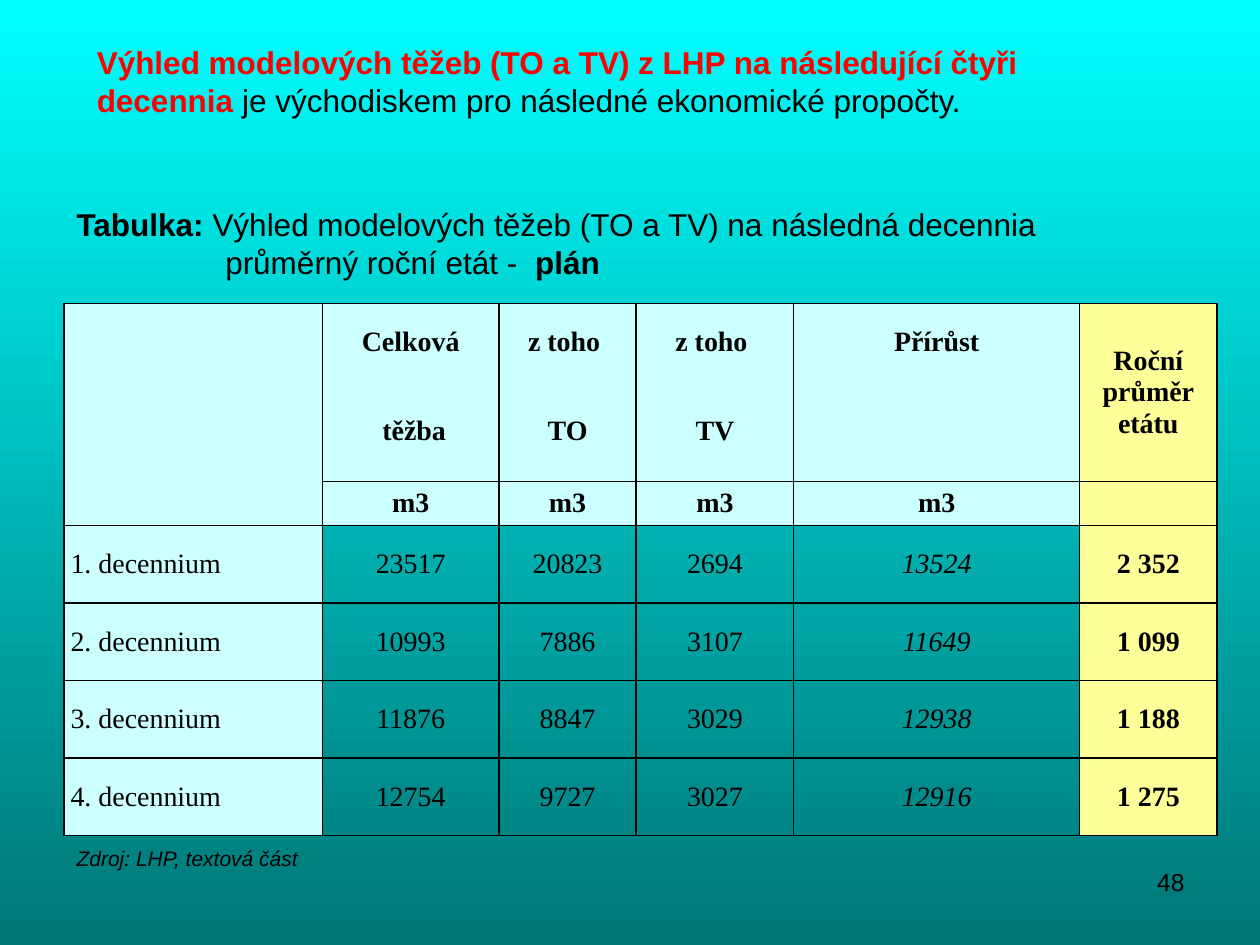
from pptx import Presentation
from pptx.dml.color import RGBColor
from pptx.enum.text import MSO_ANCHOR, MSO_AUTO_SIZE, PP_ALIGN
from pptx.oxml import parse_xml
from pptx.oxml.ns import nsdecls
from pptx.util import Inches, Pt

MID, TOP = MSO_ANCHOR.MIDDLE, MSO_ANCHOR.TOP
GROW, FIXED = MSO_AUTO_SIZE.SHAPE_TO_FIT_TEXT, MSO_AUTO_SIZE.NONE
LEFT, CENTER, RIGHT = PP_ALIGN.LEFT, PP_ALIGN.CENTER, PP_ALIGN.RIGHT

COLORS = {"cyan": "00FFFF", "teal": "007676", "red": "FF0000",
          "black": "000000", "pale": "CCFFFF", "yellow": "FFFF99"}

TITLE = [[("Výhled modelových těžeb (TO a TV) z LHP na následující čtyři decennia ", True, "red"),
          ("je východiskem pro následné ekonomické propočty.", False, "black")]]
CAPTION = [[("Tabulka:", True, "black"),
            (" Výhled modelových těžeb (TO a TV) na následná decennia", False, "black")],
           [("průměrný roční etát -  ", False, "black"), ("plán", True, "black")]]
SOURCE = [[("Zdroj: LHP, textová část", False, "black")]]
NUMBER = [[("48", False, "black")]]

ROWS = [
    ["", "Celková", "z toho ", "z toho ", "Přírůst", "Roční průměr\netátu"],
    ["", " těžba", "TO", "TV", "", ""],
    ["", "m3", "m3", "m3", "m3", ""],
    ["1. decennium", "23517", "20823", "2694", "13524", "2 352"],
    ["2. decennium", "10993", "7886", "3107", "11649", "1 099"],
    ["3. decennium", "11876", "8847", "3029", "12938", "1 188"],
    ["4. decennium", "12754", "9727", "3027", "12916", "1 275"],
]
WIDTHS = [2.05, 1.4, 1.09, 1.25, 2.27, 1.09]
HEIGHTS = [0.61, 0.8, 0.35] + [0.615] * 4
HEAD = 3
LAST = len(WIDTHS) - 1


def rgb(name):
    return RGBColor.from_string(COLORS[name])


def add_text(slide, box, paras, size, anchor=TOP, fit=GROW, align=LEFT, italic=None):
    frame = slide.shapes.add_textbox(*map(Inches, box)).text_frame
    frame.word_wrap = True
    frame.auto_size = fit
    frame.vertical_anchor = anchor
    for i, runs in enumerate(paras):
        para = frame.add_paragraph() if i else frame.paragraphs[0]
        para.alignment = align
        para.font.name, para.font.size, para.font.italic = "Arial", Pt(size), italic
        for text, bold, color in runs:
            run = para.add_run()
            run.text = text
            run.font.bold = bold
            run.font.color.rgb = rgb(color)
    return frame


def add_edges(cell, sides):
    props = cell._tc.get_or_add_tcPr()
    for i, side in enumerate("LRTB"):
        paint = (f'<a:solidFill><a:srgbClr val="{COLORS["black"]}"/></a:solidFill>'
                 if side in sides else "<a:noFill/>")
        props.insert(i, parse_xml(
            f'<a:ln{side} {nsdecls("a")} w="{Pt(1)}">{paint}</a:ln{side}>'))


def fill_cell(cell, text, row, col):
    cell.margin_left = cell.margin_right = Inches(0.05)
    cell.margin_top = cell.margin_bottom = 0
    cell.vertical_anchor = MID
    cell.text = text
    for para in cell.text_frame.paragraphs:
        para.alignment = LEFT if col == 0 else CENTER
        font = para.font
        font.name, font.size = "Times New Roman", Pt(16)
        font.bold = row < HEAD or col == LAST
        font.italic = row >= HEAD and col == LAST - 1
        font.color.rgb = rgb("black")
    if col == LAST or col == 0 or row < HEAD:
        cell.fill.solid()
        cell.fill.fore_color.rgb = rgb("yellow" if col == LAST else "pale")
    else:
        cell.fill.background()
    open_side = {0: "B", 1: "T"}.get(row, "") if 0 < col < LAST else ""
    add_edges(cell, set("LRTB") - set(open_side))


def add_grid(slide):
    shape = slide.shapes.add_table(
        len(ROWS), len(WIDTHS), Inches(0.51), Inches(2.41),
        Inches(sum(WIDTHS)), Inches(sum(HEIGHTS)))
    table = shape.table
    table.first_row = table.horz_banding = False
    for col, width in zip(table.columns, WIDTHS):
        col.width = Inches(width)
    for line, height in zip(table.rows, HEIGHTS):
        line.height = Inches(height)
    for r, row in enumerate(ROWS):
        for c, text in enumerate(row):
            fill_cell(table.cell(r, c), text, r, c)
    table.cell(0, 0).merge(table.cell(HEAD - 1, 0))
    table.cell(0, LAST).merge(table.cell(1, LAST))


def main():
    deck = Presentation()
    deck.slide_width, deck.slide_height = Inches(10), Inches(7.5)
    slide = deck.slides.add_slide(deck.slide_layouts[6])
    back = slide.background.fill
    back.gradient()
    back.gradient_angle = 270
    for stop, name in zip(back.gradient_stops, ("cyan", "teal")):
        stop.color.rgb = rgb(name)

    add_grid(slide)
    frame = add_text(slide, (0.51, 1.57, 8.86, 0.71), CAPTION, 18, anchor=MID)
    for para, indent in zip(frame.paragraphs, (-1.18, 0)):
        props = para._p.get_or_add_pPr()
        props.set("marL", str(Inches(1.18)))
        props.set("indent", str(Inches(indent)))
    add_text(slide, (0.51, 6.66, 3.39, 0.3), SOURCE, 12, italic=True)
    add_text(slide, (0.67, 0.29, 8.66, 1.01), TITLE, 18)
    add_text(slide, (7.17, 6.83, 2.33, 0.52), NUMBER, 14, fit=FIXED, align=RIGHT)
    deck.save("out.pptx")


if __name__ == "__main__":
    main()
